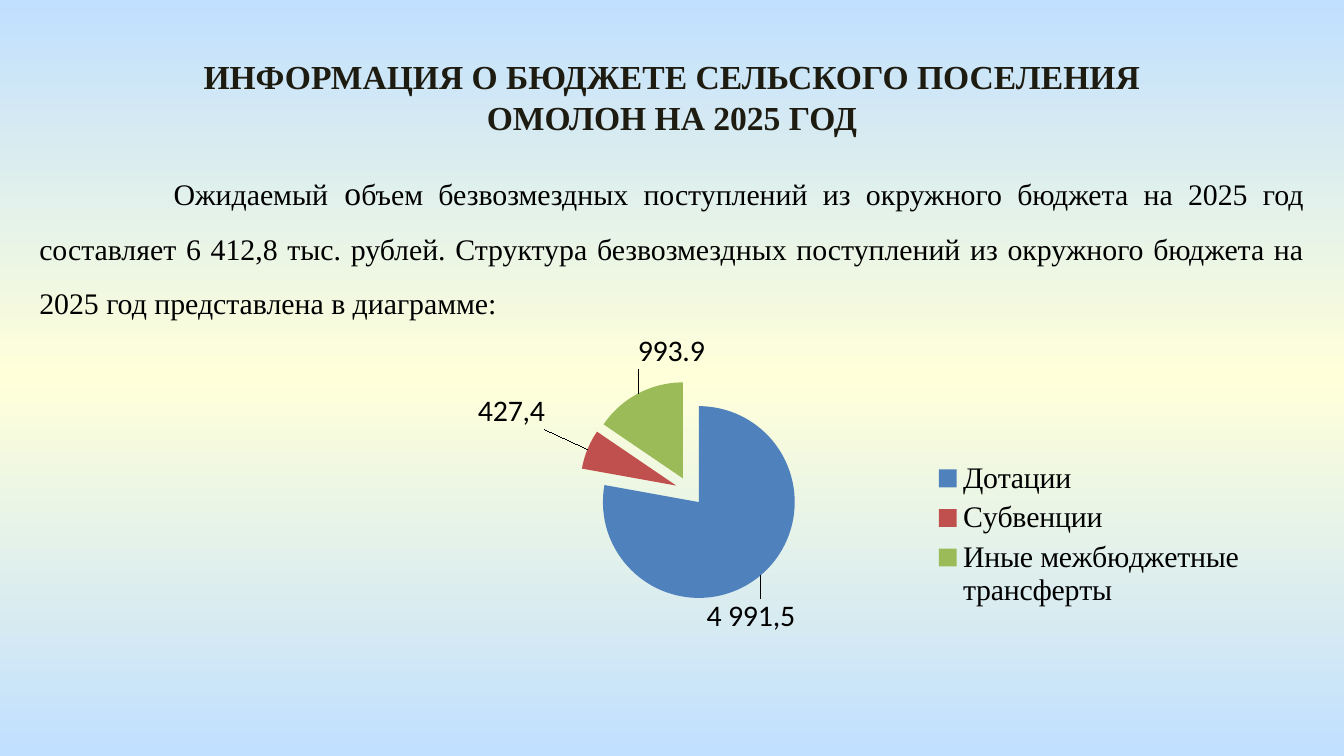
from dataclasses import dataclass

from lxml import etree
from pptx import Presentation
from pptx.chart.data import CategoryChartData
from pptx.dml.color import RGBColor
from pptx.enum import chart as ch, text
from pptx.oxml import parse_xml
from pptx.oxml.ns import nsdecls, qn
from pptx.util import Pt


@dataclass(frozen=True)
class Theme:
    serif: str = "Times New Roman"
    sans: str = "Calibri"
    head: str = "1E1C11"
    ink: str = "000000"
    sky: str = "C1E0FF"
    sun: str = "FFFFD9"
    big: int = 18
    mid: int = 16


T = Theme()

TITLE = ["ИНФОРМАЦИЯ О БЮДЖЕТЕ СЕЛЬСКОГО ПОСЕЛЕНИЯ", "ОМОЛОН НА 2025 ГОД"]
BODY = [
    ("Ожидаемый", T.mid),
    (" о", T.big),
    ("бъем безвозмездных поступлений из окружного бюджета на 2025 год "
     "составляет 6 412,8 тыс. рублей. Структура безвозмездных поступлений "
     "из окружного бюджета на 2025 год представлена в диаграмме:", T.mid),
]
# name, value, colour, label text, label shift as a share of the chart
PARTS = [
    ("Дотации", 4991.5, "4F81BD", "4 991,5", (-0.05, 0.04)),
    ("Субвенции", 427.4, "C0504D", "427,4", (-0.03, -0.04)),
    ("Иные межбюджетные трансферты", 993.9, "9BBB59", None, (0.06, -0.04)),
]


def style(font, name, size, color, bold=False):
    font.name, font.size, font.bold = name, Pt(size), bold
    font.color.rgb = RGBColor.from_string(color)


def paint(slide):
    """Fill the background with a vertical sky-sun-sky gradient."""
    fill = slide.background.fill
    fill.gradient()
    grad = slide._element.find(".//" + qn("a:gradFill"))
    for kid in list(grad):
        grad.remove(kid)
    stops = "".join(
        f'<a:gs pos="{pos}"><a:srgbClr val="{tint}"/></a:gs>'
        for pos, tint in [(0, T.sky), (50000, T.sun), (100000, T.sky)])
    grad.append(parse_xml(f'<a:gsLst {nsdecls("a")}>{stops}</a:gsLst>'))
    grad.append(parse_xml(f'<a:lin {nsdecls("a")} ang="5400000" scaled="0"/>'))


def set_frame(frame):
    frame.word_wrap = True
    frame.auto_size = text.MSO_AUTO_SIZE.SHAPE_TO_FIT_TEXT
    frame.vertical_anchor = text.MSO_ANCHOR.TOP


def add_title(slide):
    box = slide.shapes.title
    box.left, box.top, box.width, box.height = Pt(45), Pt(26.6), Pt(630), Pt(51)
    frame = box.text_frame
    set_frame(frame)
    frame.text = "\n".join(TITLE)
    for para in frame.paragraphs:
        para.alignment = text.PP_ALIGN.CENTER
        para.space_before = Pt(0)
        style(para.font, T.serif, T.big, T.head, True)


def add_body(slide):
    box = slide.shapes.add_textbox(Pt(14), Pt(78), Pt(692), Pt(98))
    set_frame(box.text_frame)
    para = box.text_frame.paragraphs[0]
    para.alignment = text.PP_ALIGN.JUSTIFY
    para.line_spacing = 1.5
    para._p.get_or_add_pPr().set("indent", str(Pt(72)))
    for words, size in BODY:
        run = para.add_run()
        run.text = words
        style(run.font, T.serif, size, T.ink)


def layout(x, y, size=None):
    """Return a manual chart layout; with a size it is the inner plot area."""
    items = [("x", x), ("y", y)]
    if size:
        items = [("layoutTarget", "inner"), ("xMode", "edge"),
                 ("yMode", "edge"), *items, ("w", size[0]), ("h", size[1])]
    body = "".join(f'<c:{tag} val="{val}"/>' for tag, val in items)
    return parse_xml(f'<c:layout {nsdecls("c")}><c:manualLayout>{body}'
                     '</c:manualLayout></c:layout>')


def add_label(point, words, shift):
    label = point.data_label
    if words:
        para = label.text_frame.paragraphs[0]
        run = para.add_run()
        run.text = words
        style(run.font, T.sans, T.mid, T.ink)
    else:
        style(label.font, T.sans, T.mid, T.ink)
    label.position = ch.XL_LABEL_POSITION.OUTSIDE_END
    node = label._dLbl
    old = node.find(qn("c:layout"))
    if old is not None:
        node.remove(old)
    node.find(qn("c:idx")).addnext(layout(*shift))


def add_pie(slide):
    data = CategoryChartData(number_format="#,##0.0")
    data.categories = [part[0] for part in PARTS]
    data.add_series("Series 1", [part[1] for part in PARTS])
    chart = slide.shapes.add_chart(
        ch.XL_CHART_TYPE.PIE, Pt(45), Pt(175), Pt(630), Pt(223), data).chart
    style(chart.font, T.sans, T.big, T.ink)
    chart.has_title = False
    chart.has_legend = True
    chart.legend.position = ch.XL_LEGEND_POSITION.RIGHT
    chart.legend.include_in_layout = False
    style(chart.legend.font, T.serif, T.mid, T.ink)

    plot = chart.plots[0]
    plot.vary_by_categories = True
    series = plot.series[0]
    labels = series.data_labels
    labels.show_value = True
    labels.number_format = "#,##0.0"
    labels.number_format_is_linked = False
    labels.position = ch.XL_LABEL_POSITION.OUTSIDE_END
    style(labels.font, T.sans, T.mid, T.ink)
    for i, (_, _, tint, words, shift) in enumerate(PARTS):
        point = series.points[i]
        point.format.fill.solid()
        point.format.fill.fore_color.rgb = RGBColor.from_string(tint)
        add_label(point, words, shift)

    burst = etree.Element(qn("c:explosion"), val="15")
    series._element.find(qn("c:dPt")).addprevious(burst)
    area = chart._chartSpace.find(".//" + qn("c:plotArea"))
    old = area.find(qn("c:layout"))
    if old is not None:
        area.remove(old)
    area.insert(0, layout(0.42, 0.13, (0.19, 0.53)))


def main():
    deck = Presentation()
    deck.slide_width, deck.slide_height = Pt(720), Pt(405)
    slide = deck.slides.add_slide(deck.slide_layouts[5])
    paint(slide)
    add_title(slide)
    add_body(slide)
    add_pie(slide)
    deck.save("out.pptx")


if __name__ == "__main__":
    main()
